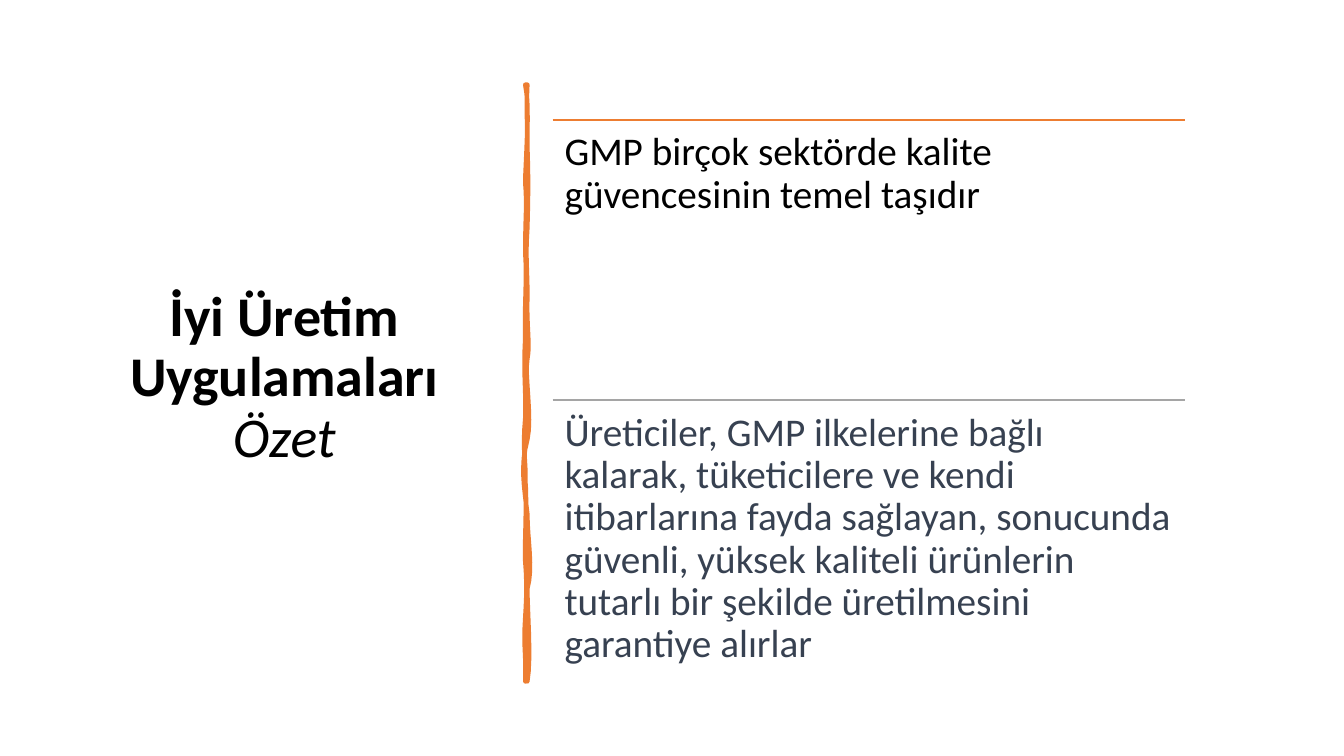
from dataclasses import dataclass

from lxml.etree import SubElement
from pptx import Presentation
from pptx.dml.color import RGBColor
from pptx.enum.shapes import MSO_CONNECTOR
from pptx.enum.text import MSO_ANCHOR, MSO_AUTO_SIZE, PP_ALIGN
from pptx.oxml.ns import qn
from pptx.slide import Slide
from pptx.util import Inches, Pt


@dataclass(frozen=True)
class Theme:
    font: str = "Calibri"
    black: RGBColor = RGBColor(0, 0, 0)
    slate: RGBColor = RGBColor(0x37, 0x41, 0x51)
    orange: RGBColor = RGBColor(0xED, 0x7D, 0x31)
    gray: RGBColor = RGBColor(0xA5, 0xA5, 0xA5)
    head: Pt = Pt(40)
    body: Pt = Pt(28)
    thin: Pt = Pt(1)
    brush: Pt = Pt(3.25)


@dataclass(frozen=True)
class Point:
    text: str
    ink: RGBColor
    rule: RGBColor


THEME = Theme()
POINTS = [
    Point("GMP birçok sektörde kalite güvencesinin temel taşıdır",
          THEME.black, THEME.orange),
    Point("Üreticiler, GMP ilkelerine bağlı kalarak, tüketicilere ve kendi "
          "itibarlarına fayda sağlayan, sonucunda güvenli, yüksek kaliteli "
          "ürünlerin tutarlı bir şekilde üretilmesini garantiye alırlar",
          THEME.slate, THEME.gray),
]
LEFT, TOP, WIDTH, HEIGHT = 5.48, 1.19, 6.27, 2.78

# Brush stroke: each curve holds two control points and an end point
START = (5.23, 0.84)
CURVES = [
    (5.22, 1.03, 5.23, 1.16, 5.23, 1.46), (5.24, 1.74, 5.24, 1.91, 5.23, 2.26),
    (5.21, 2.58, 5.23, 2.62, 5.23, 2.94), (5.22, 3.25, 5.26, 3.42, 5.23, 3.56),
    (5.20, 3.72, 5.28, 4.14, 5.23, 4.36), (5.16, 4.62, 5.20, 4.83, 5.23, 5.10),
    (5.23, 5.35, 5.29, 5.63, 5.23, 5.84), (5.23, 6.06, 5.27, 6.53, 5.23, 6.76),
    (5.22, 6.75, 5.22, 6.76, 5.21, 6.76), (5.22, 6.45, 5.19, 6.44, 5.21, 6.13),
    (5.23, 5.83, 5.22, 5.70, 5.21, 5.57), (5.20, 5.46, 5.23, 4.94, 5.21, 4.77),
    (5.22, 4.62, 5.18, 4.47, 5.21, 4.15), (5.22, 3.86, 5.19, 3.73, 5.21, 3.35),
    (5.20, 3.00, 5.23, 2.79, 5.21, 2.50), (5.21, 2.16, 5.23, 2.03, 5.21, 1.81),
    (5.21, 1.65, 5.26, 1.04, 5.21, 0.84), (5.22, 0.84, 5.22, 0.84, 5.23, 0.84),
]
STEPS = 8


def trace() -> list[tuple[int, int]]:
    """Turn the curves into short straight steps, in EMU."""
    dots = []
    x, y = START
    for ax, ay, bx, by, ex, ey in CURVES:
        for step in range(1, STEPS + 1):
            t = step / STEPS
            u = 1 - t
            parts = (u ** 3, 3 * u * u * t, 3 * u * t * t, t ** 3)
            dot_x = sum(k * v for k, v in zip(parts, (x, ax, bx, ex)))
            dot_y = sum(k * v for k, v in zip(parts, (y, ay, by, ey)))
            dots.append((Inches(dot_x), Inches(dot_y)))
        x, y = ex, ey
    return dots


def add_title(slide: Slide) -> None:
    title = slide.shapes.title
    title.left, title.top = Inches(0.65), Inches(0.7)
    title.width, title.height = Inches(4.34), Inches(6.11)
    frame = title.text_frame
    frame.word_wrap = True
    frame.auto_size = MSO_AUTO_SIZE.NONE
    frame.vertical_anchor = MSO_ANCHOR.MIDDLE
    para = frame.paragraphs[0]
    para.alignment = PP_ALIGN.CENTER
    para.line_spacing = 0.9
    para.font.name, para.font.size = THEME.font, THEME.head
    para.font.color.rgb = THEME.black
    name = para.add_run()
    name.text = "İyi Üretim Uygulamaları"
    name.font.bold = True
    para.add_line_break()
    label = para.add_run()
    label.text = "Özet"
    label.font.italic = True


def add_brush(slide: Slide) -> None:
    dots = trace()
    pen = slide.shapes.build_freeform(*dots[-1])
    pen.add_line_segments(dots, close=True)
    brush = pen.convert_to_shape()
    brush.shadow.inherit = False
    brush.fill.solid()
    brush.fill.fore_color.rgb = THEME.orange
    brush.line.color.rgb = THEME.orange
    brush.line.width = THEME.brush


def add_point(slide: Slide, point: Point, top: float) -> None:
    rule = slide.shapes.add_connector(
        MSO_CONNECTOR.STRAIGHT, Inches(LEFT), Inches(top),
        Inches(LEFT + WIDTH), Inches(top))
    rule.line.color.rgb = point.rule
    rule.line.width = THEME.thin
    SubElement(rule._element.spPr, qn("a:effectLst"))

    box = slide.shapes.add_textbox(
        Inches(LEFT), Inches(top), Inches(WIDTH), Inches(HEIGHT))
    frame = box.text_frame
    frame.word_wrap = True
    frame.margin_left = frame.margin_right = Inches(0.12)
    frame.margin_top = frame.margin_bottom = Inches(0.12)
    para = frame.paragraphs[0]
    para.text = point.text
    para.line_spacing = 0.9
    para.font.name, para.font.size = THEME.font, THEME.body
    para.font.color.rgb = point.ink


def main() -> None:
    deck = Presentation()
    deck.slide_width, deck.slide_height = Inches(13.33), Inches(7.5)
    slide = deck.slides.add_slide(deck.slide_layouts[5])
    add_title(slide)
    add_brush(slide)
    for row, point in enumerate(POINTS):
        add_point(slide, point, TOP + row * HEIGHT)
    deck.save("out.pptx")


if __name__ == "__main__":
    main()
